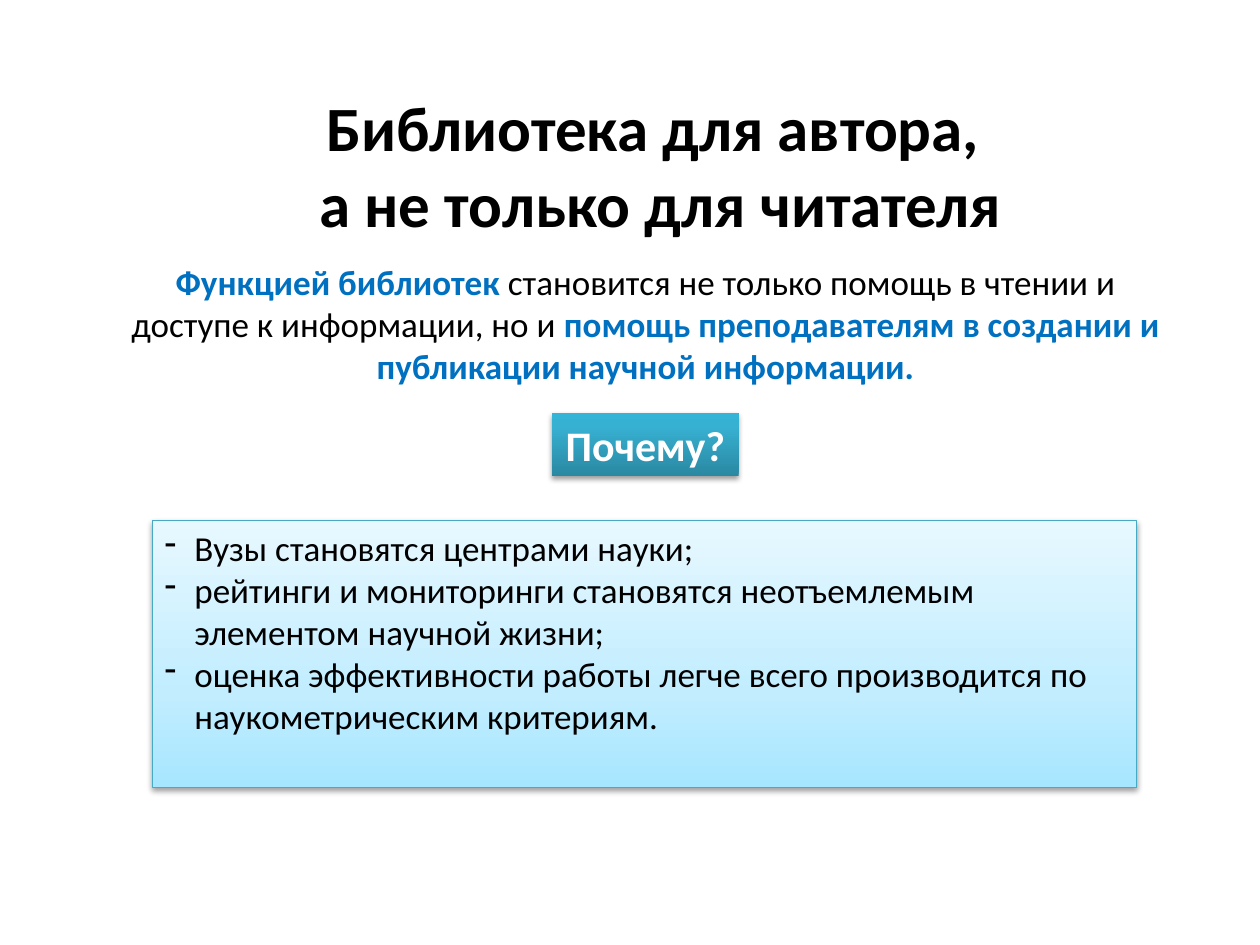
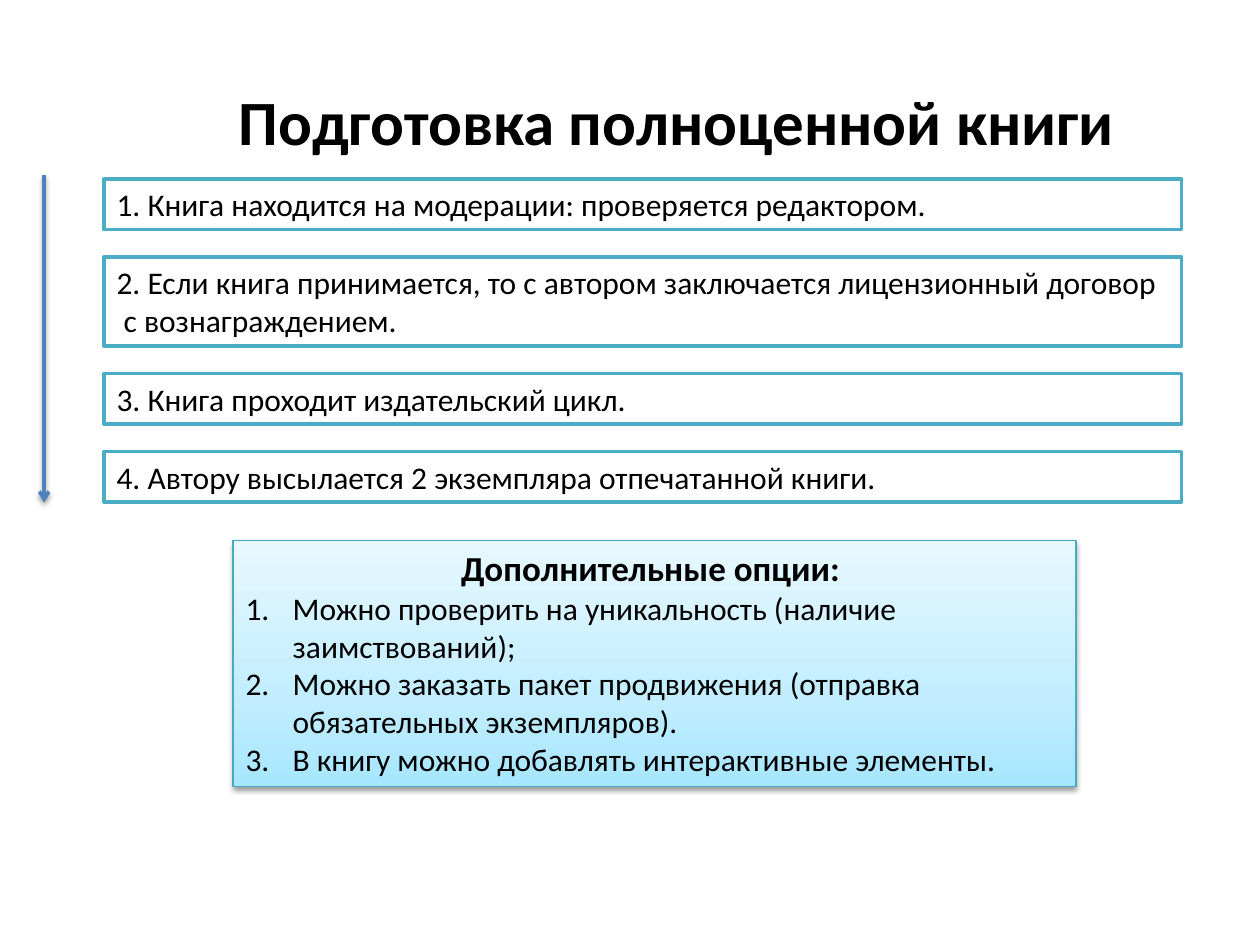
from lxml.etree import SubElement
from pptx import Presentation
from pptx.dml.color import RGBColor
from pptx.enum.shapes import MSO_CONNECTOR, MSO_SHAPE
from pptx.enum.text import MSO_ANCHOR as Anchor, MSO_AUTO_SIZE as AutoSize, PP_ALIGN as Align
from pptx.oxml.ns import qn
from pptx.util import Cm, Pt

FONT = "Calibri"
BLACK = RGBColor(0x00, 0x00, 0x00)
WHITE = RGBColor(0xFF, 0xFF, 0xFF)
ACCENT = RGBColor(0x00, 0x70, 0xC0)
PANEL_LINE = RGBColor(0x46, 0xAA, 0xC5)
STEP_LINE = RGBColor(0x4B, 0xAC, 0xC6)
ARROW = RGBColor(0x4F, 0x81, 0xBD)

# Gradient stops from bottom to top: percent and colour
PANEL_STOPS = [(0, RGBColor(0xA7, 0xE6, 0xFF)), (35, RGBColor(0xC1, 0xED, 0xFF)),
               (100, RGBColor(0xE7, 0xF8, 0xFF))]
BADGE_STOPS = [(0, RGBColor(0x2A, 0x88, 0xA2)), (80, RGBColor(0x37, 0xB1, 0xD2)),
               (100, RGBColor(0x34, 0xB4, 0xD6))]


class Builder:
    """Holds the deck, its style and the current page."""

    def __init__(self):
        self.deck = Presentation()
        self.deck.slide_width, self.deck.slide_height = Cm(25.4), Cm(19.05)
        self.page = None

    def start_page(self, title, left, top):
        self.page = self.deck.slides.add_slide(self.deck.slide_layouts[5])
        box = self.page.shapes.title
        box.left, box.top, box.width, box.height = Cm(left), Cm(top), Cm(18.44), Cm(2.36)
        frame = self.prepare(box, Anchor.MIDDLE)
        frame.text = title
        self.style(frame.paragraphs[0], 36, bold=True, align=Align.CENTER)

    def prepare(self, box, anchor=Anchor.TOP):
        frame = box.text_frame
        frame.word_wrap = True
        frame.auto_size = AutoSize.NONE
        frame.vertical_anchor = anchor
        return frame

    def style(self, para, size, color=BLACK, bold=False, align=Align.LEFT):
        para.alignment = align
        font = para.font
        font.name, font.size, font.bold = FONT, Pt(size), bold
        font.color.rgb = color

    def add_lines(self, frame, lines, size, bullet=None, hang=0, **look):
        """Fill the frame; bullet is an element name with its attributes."""
        for line in lines:
            para = frame.paragraphs[0]
            if para.text:
                para = frame.add_paragraph()
            para.text = line
            if bullet:
                props = para._p.get_or_add_pPr()
                props.set("marL", str(Cm(hang)))
                props.set("indent", str(-Cm(hang)))
                tag, values = bullet
                SubElement(props, qn(tag), values)
            self.style(para, size, **look)

    def rich_text(self, left, top, width, height, size, spans):
        """A centred paragraph in which marked spans are bold and coloured."""
        frame = self.prepare(self.page.shapes.add_textbox(Cm(left), Cm(top), Cm(width), Cm(height)))
        para = frame.paragraphs[0]
        para.alignment = Align.CENTER
        for text, marked in spans:
            span = para.add_run()
            span.text = text
            span.font.name, span.font.size, span.font.bold = FONT, Pt(size), marked
            span.font.color.rgb = ACCENT if marked else BLACK

    def rectangle(self, left, top, width, height, line=None, weight=0.75, stops=None):
        box = self.page.shapes.add_shape(MSO_SHAPE.RECTANGLE, Cm(left), Cm(top), Cm(width), Cm(height))
        box.shadow.inherit = False
        if line:
            box.line.color.rgb = line
            box.line.width = Pt(weight)
        else:
            box.line.fill.background()
        if stops:
            self.gradient(box, stops)
            self.shadow(box)
        else:
            box.fill.solid()
            box.fill.fore_color.rgb = WHITE
        return self.prepare(box)

    def gradient(self, box, stops):
        box.fill.gradient()
        fill = box._element.spPr.find(qn("a:gradFill"))
        for child in list(fill):
            fill.remove(child)
        stop_list = SubElement(fill, qn("a:gsLst"))
        for percent, color in stops:
            stop = SubElement(stop_list, qn("a:gs"), pos=str(percent * 1000))
            SubElement(stop, qn("a:srgbClr"), val=str(color))
        SubElement(fill, qn("a:lin"), ang=str(270 * 60000), scaled="0")

    def shadow(self, item):
        props = item._element.spPr
        effects = props.find(qn("a:effectLst"))
        if effects is None:
            effects = SubElement(props, qn("a:effectLst"))
        outer = SubElement(effects, qn("a:outerShdw"), blurRad=str(Pt(3.1)), dist=str(Pt(1.7)),
                           dir=str(90 * 60000), rotWithShape="0")
        color = SubElement(outer, qn("a:srgbClr"), val=str(BLACK))
        SubElement(color, qn("a:alpha"), val="38000")

    def down_arrow(self, x, top, bottom):
        arrow = self.page.shapes.add_connector(MSO_CONNECTOR.STRAIGHT, Cm(x), Cm(top), Cm(x), Cm(bottom))
        arrow.line.color.rgb = ARROW
        arrow.line.width = Pt(2)
        SubElement(arrow._element.spPr.find(qn("a:ln")), qn("a:tailEnd"), type="arrow")
        self.shadow(arrow)


def library_page(builder):
    builder.start_page("Библиотека для автора, \vа не только для читателя", 4.09, 2.13)
    builder.rich_text(2.31, 5.13, 21.41, 2.82, 20, [
        ("Функцией библиотек ", True),
        ("становится не только помощь в чтении и доступе к информации, но и ", False),
        ("помощь преподавателям в создании и публикации научной информации.", True),
    ])

    # Question badge
    badge = builder.rectangle(11.13, 8.33, 3.76, 1.27, stops=BADGE_STOPS)
    badge.word_wrap = False
    builder.add_lines(badge, ["Почему?"], 24, color=WHITE, bold=True, align=Align.CENTER)

    # Reasons
    reasons = builder.rectangle(3.07, 10.49, 19.84, 5.38, PANEL_LINE, stops=PANEL_STOPS)
    builder.add_lines(reasons, [
        "Вузы становятся центрами науки;",
        "рейтинги и мониторинги становятся неотъемлемым элементом научной жизни;",
        "оценка эффективности работы легче всего производится по наукометрическим критериям.",
    ], 20, bullet=("a:buChar", {"char": "-"}), hang=0.6)


def book_page(builder):
    builder.start_page("Подготовка полноценной книги", 4.42, 1.24)

    # Extra options
    options = builder.rectangle(4.7, 10.9, 16.99, 4.95, PANEL_LINE, stops=PANEL_STOPS)
    builder.add_lines(options, ["Дополнительные опции: "], 20, bold=True, align=Align.CENTER)
    builder.add_lines(options, [
        "Можно проверить на уникальность (наличие заимствований);",
        "Можно заказать пакет продвижения (отправка обязательных экземпляров).",
        "В книгу можно добавлять интерактивные элементы.",
    ], 18, bullet=("a:buAutoNum", {"type": "arabicPeriod"}), hang=0.95)

    # Steps, stacked with equal gaps
    steps = [
        ["1. Книга находится на модерации: проверяется редактором."],
        ["2. Если книга принимается, то с автором заключается лицензионный договор",
         " с вознаграждением."],
        ["3. Книга проходит издательский цикл."],
        ["4. Автору высылается 2 экземпляра отпечатанной книги."],
    ]
    top, gap = 3.61, 0.55
    for lines in steps:
        height = 0.24 + 0.78 * len(lines)
        step = builder.rectangle(2.1, top, 21.72, height, STEP_LINE, weight=2)
        builder.add_lines(step, lines, 18)
        top += height + gap
    builder.down_arrow(0.89, 3.53, 10.13)


def main():
    builder = Builder()
    library_page(builder)
    book_page(builder)
    builder.deck.save("out.pptx")


if __name__ == "__main__":
    main()
